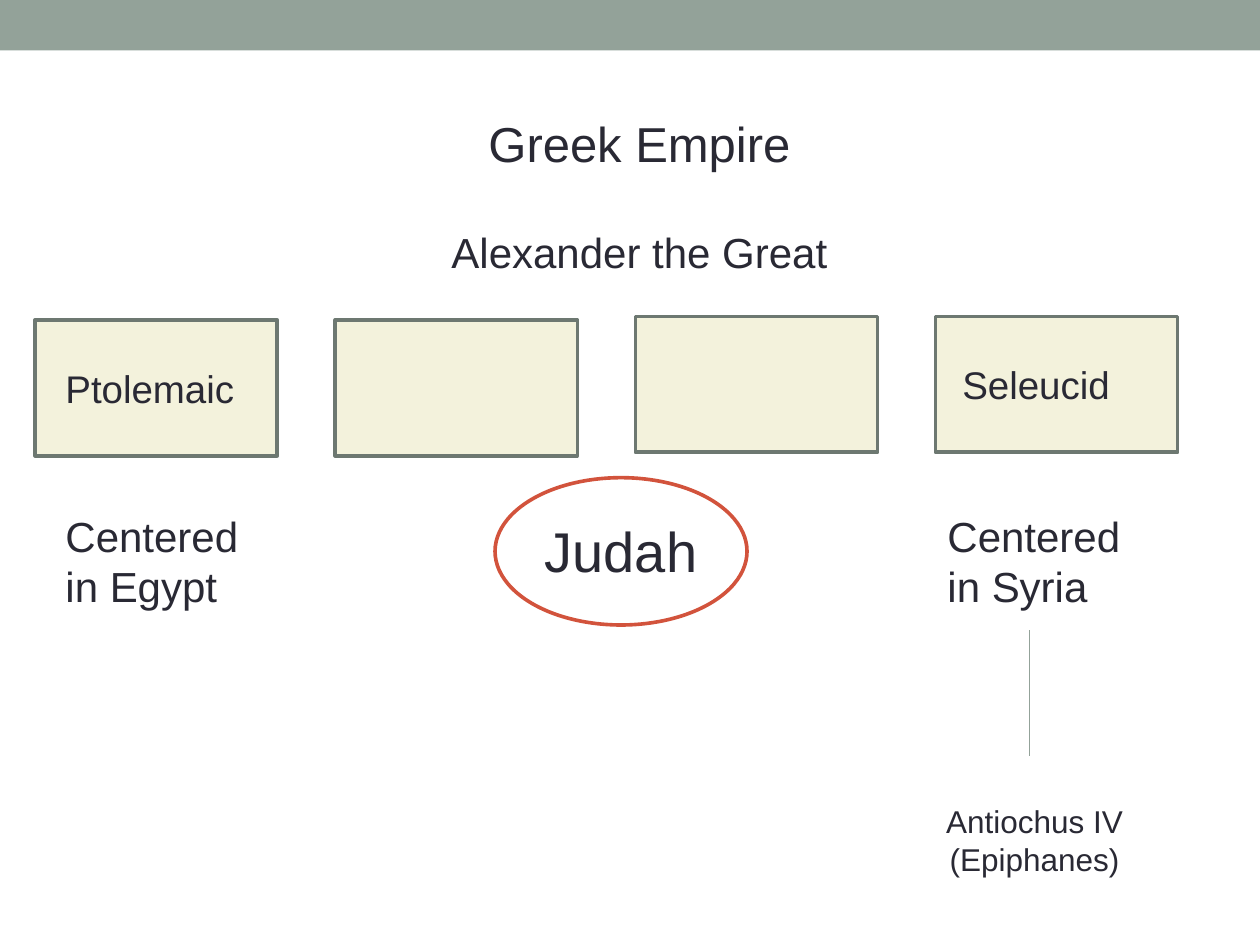
from lxml.etree import SubElement
from pptx import Presentation
from pptx.dml.color import RGBColor
from pptx.enum.shapes import MSO_CONNECTOR, MSO_SHAPE
from pptx.enum.text import MSO_ANCHOR, PP_ALIGN
from pptx.oxml.ns import qn
from pptx.util import Cm, Pt

COLORS = {
    "band": "93A299",
    "box": "F3F2DC",
    "box_line": "6D7871",
    "text": "292934",
    "judah": "D2533C",
}


def color(name):
    return RGBColor.from_string(COLORS[name])


def add_outline(slide, kind, place, fill=None, line=None):
    """Add a shape without shadow; a missing fill or line stays empty."""
    shape = slide.shapes.add_shape(kind, *map(Cm, place))
    shape.shadow.inherit = False
    if fill:
        shape.fill.solid()
        shape.fill.fore_color.rgb = color(fill)
    else:
        shape.fill.background()
    if line:
        shape.line.color.rgb = color(line)
        shape.line.width = Pt(2.08)
    else:
        shape.line.fill.background()


presentation = Presentation()
presentation.slide_width, presentation.slide_height = Cm(25.4), Cm(19.05)
slide = presentation.slides.add_slide(presentation.slide_layouts[6])

add_outline(slide, MSO_SHAPE.RECTANGLE, (0, 0, 25.4, 1.02), fill="band")

# Row of four boxes, the right pair slightly higher
for column, top in enumerate((6.45, 6.45, 6.38, 6.38)):
    place = (0.71 + column * 6.05, top, 4.88, 2.74)
    add_outline(slide, MSO_SHAPE.RECTANGLE, place, "box", "box_line")

LEFT, CENTER = PP_ALIGN.LEFT, PP_ALIGN.CENTER
TOP, MIDDLE = MSO_ANCHOR.TOP, MSO_ANCHOR.MIDDLE
labels = [
    ("Greek Empire", (6.22, 2.16, 13.34, 1.45), 28, CENTER, TOP),
    ("Alexander the Great", (5.59, 4.45, 14.6, 1.27), 24, CENTER, TOP),
    ("Ptolemaic", (1.07, 7.24, 4.24, 1.19), 22, LEFT, TOP),
    ("Seleucid", (19.15, 7.16, 4.24, 1.19), 22, LEFT, TOP),
    ("Judah", (7.39, 10.29, 10.26, 1.63), 32, CENTER, TOP),
    ("Centered in Egypt", (1.07, 10.16, 4.52, 2.31), 24, LEFT, TOP),
    ("Centered in Syria", (18.85, 10.16, 4.52, 2.31), 24, LEFT, TOP),
    ("Antiochus IV (Epiphanes)", (17.68, 16.03, 6.35, 1.8), 18, CENTER, MIDDLE),
]
for text, place, size, alignment, anchor in labels:
    frame = slide.shapes.add_textbox(*map(Cm, place)).text_frame
    frame.word_wrap = True
    frame.vertical_anchor = anchor
    paragraph = frame.paragraphs[0]
    paragraph.alignment = alignment
    run = paragraph.add_run()
    run.text = text
    for name, value in {"name": "Arial", "size": Pt(size)}.items():
        setattr(run.font, name, value)
    run.font.color.rgb = color("text")

syria_line = slide.shapes.add_connector(
    MSO_CONNECTOR.STRAIGHT, Cm(20.75), Cm(12.7), Cm(20.75), Cm(15.24)
)
syria_line.line.color.rgb = color("band")
syria_line.line.width = Pt(0.75)
SubElement(syria_line._element.spPr, qn("a:effectLst"))

add_outline(slide, MSO_SHAPE.OVAL, (9.98, 9.63, 5.08, 2.97), line="judah")

presentation.save("out.pptx")
